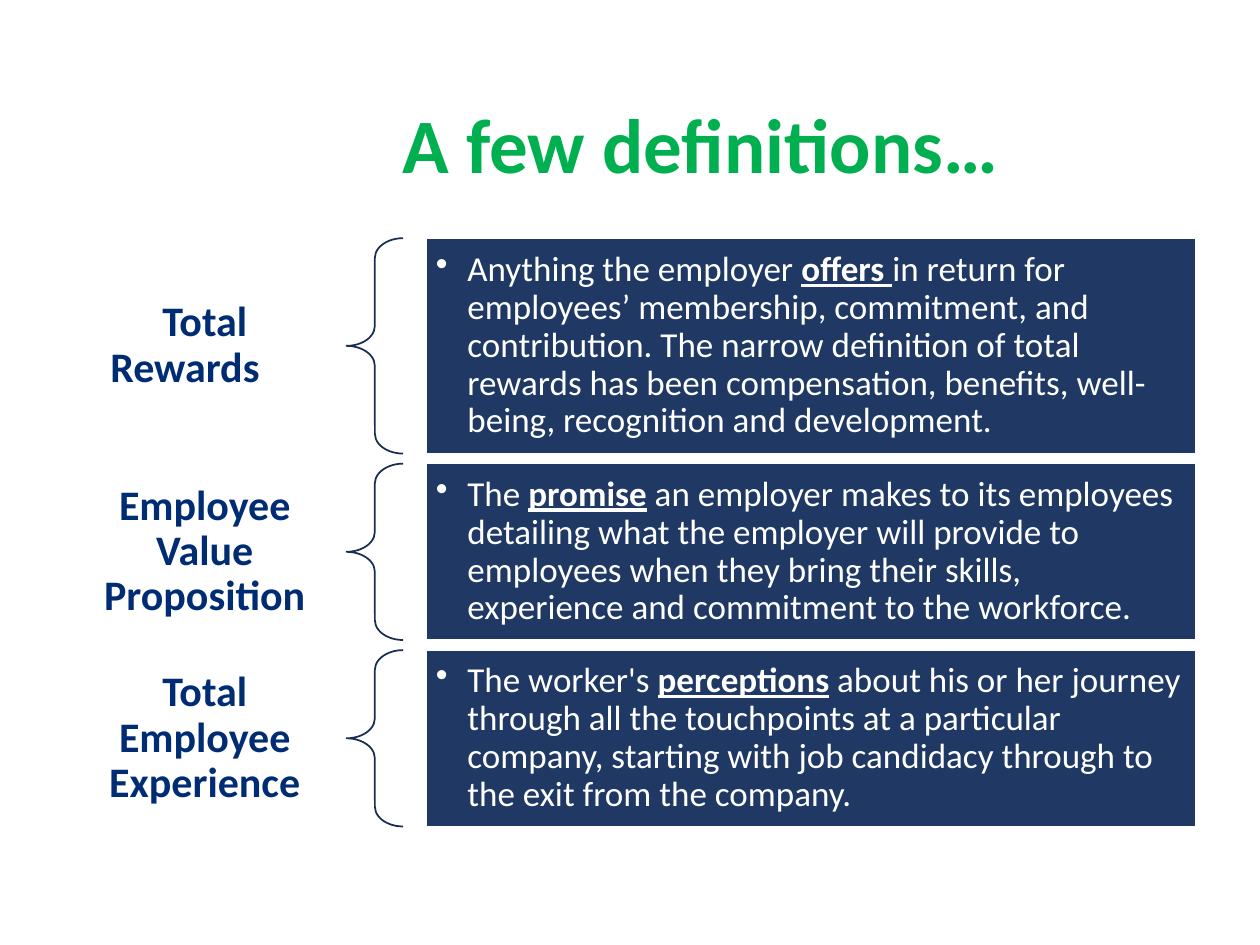
from dataclasses import dataclass

from lxml.etree import SubElement
from pptx import Presentation
from pptx.dml.color import RGBColor
from pptx.enum.shapes import MSO_SHAPE as Shape
from pptx.enum.text import MSO_ANCHOR as Anchor, PP_ALIGN as Align
from pptx.oxml.ns import qn
from pptx.slide import Slide
from pptx.util import Inches, Pt

GREEN = RGBColor(0x00, 0xB0, 0x50)
BLUE = RGBColor(0x00, 0x2C, 0x73)
NAVY = RGBColor(0x1F, 0x38, 0x64)
BRACE = RGBColor(0x19, 0x2D, 0x50)
WHITE = RGBColor(0xFF, 0xFF, 0xFF)

TOP, GAP = 1.89, 0.08
DEFINITIONS = [
    ("Total Rewards\t", 1.71, 1.19, "Anything the employer ", "offers ",
     "in return for employees’ membership, commitment, and contribution. "
     "The narrow definition of total rewards has been compensation, benefits, "
     "well-being, recognition and development."),
    ("Employee Value Proposition", 1.4, 1.25, "The ", "promise",
     " an employer makes to its employees detailing what the employer will "
     "provide to employees when they bring their skills, experience and "
     "commitment to the workforce."),
    ("Total Employee Experience", 1.4, 1.25, "The worker's ", "perceptions",
     " about his or her journey through all the touchpoints at a particular "
     "company, starting with job candidacy through to the exit from the company."),
]


@dataclass
class Painter:
    """Draws the elements of a definitions slide in one shared style."""

    page: Slide
    font: str = "Calibri"

    def style(self, para, size, color, align):
        para.alignment = align
        para.line_spacing = 0.9
        para.font.name = self.font
        para.font.size = Pt(size)
        para.font.color.rgb = color

    def frame(self, shape, across, down):
        frame = shape.text_frame
        frame.word_wrap = True
        frame.vertical_anchor = Anchor.MIDDLE
        frame.margin_left = frame.margin_right = Inches(across)
        frame.margin_top = frame.margin_bottom = Inches(down)
        return frame

    def heading(self, left, top, width, height, text, size, color, across=0.1, down=0.05):
        box = self.page.shapes.add_textbox(
            Inches(left), Inches(top), Inches(width), Inches(height))
        para = self.frame(box, across, down).paragraphs[0]
        para.add_run().text = text
        self.style(para, size, color, Align.CENTER)
        para.font.bold = True

    def shape(self, kind, left, top, width, height, line):
        shape = self.page.shapes.add_shape(
            kind, Inches(left), Inches(top), Inches(width), Inches(height))
        shape.shadow.inherit = False
        shape.line.color.rgb = line
        shape.line.width = Pt(1)
        return shape

    def brace(self, top, height):
        brace = self.shape(Shape.LEFT_BRACE, 2.75, top, 0.45, height, BRACE)
        brace.fill.background()
        brace.adjustments[0] = 0.35
        brace.adjustments[1] = 0.5

    def panel(self, top, height, before, key, after):
        panel = self.shape(Shape.RECTANGLE, 3.38, top, 6.11, height, WHITE)
        panel.fill.solid()
        panel.fill.fore_color.rgb = NAVY
        para = self.frame(panel, 0.08, 0.08).paragraphs[0]
        for text in (before, key, after):
            span = para.add_run()
            span.text = text
            if text == key:
                span.font.bold = span.font.underline = True
        props = para._p.get_or_add_pPr()
        props.set("marL", str(Inches(0.25)))
        props.set("indent", str(Inches(-0.25)))
        SubElement(props, qn("a:buChar"), char="•")
        self.style(para, 20, WHITE, Align.LEFT)


def main():
    deck = Presentation()
    deck.slide_width, deck.slide_height = Inches(10), Inches(7.5)
    painter = Painter(deck.slides.add_slide(deck.slide_layouts[6]))
    painter.heading(1.25, 0.45, 8.62, 1.45, "A few definitions…", 44, GREEN)
    top = TOP
    for label, height, label_height, before, key, after in DEFINITIONS:
        label_top = top + (height - label_height) / 2
        painter.heading(0.5, label_top, 2.25, label_height, label, 24, BLUE, 0.19, 0.07)
        painter.brace(top, height)
        painter.panel(top, height, before, key, after)
        top += height + GAP
    deck.save("out.pptx")


if __name__ == "__main__":
    main()
